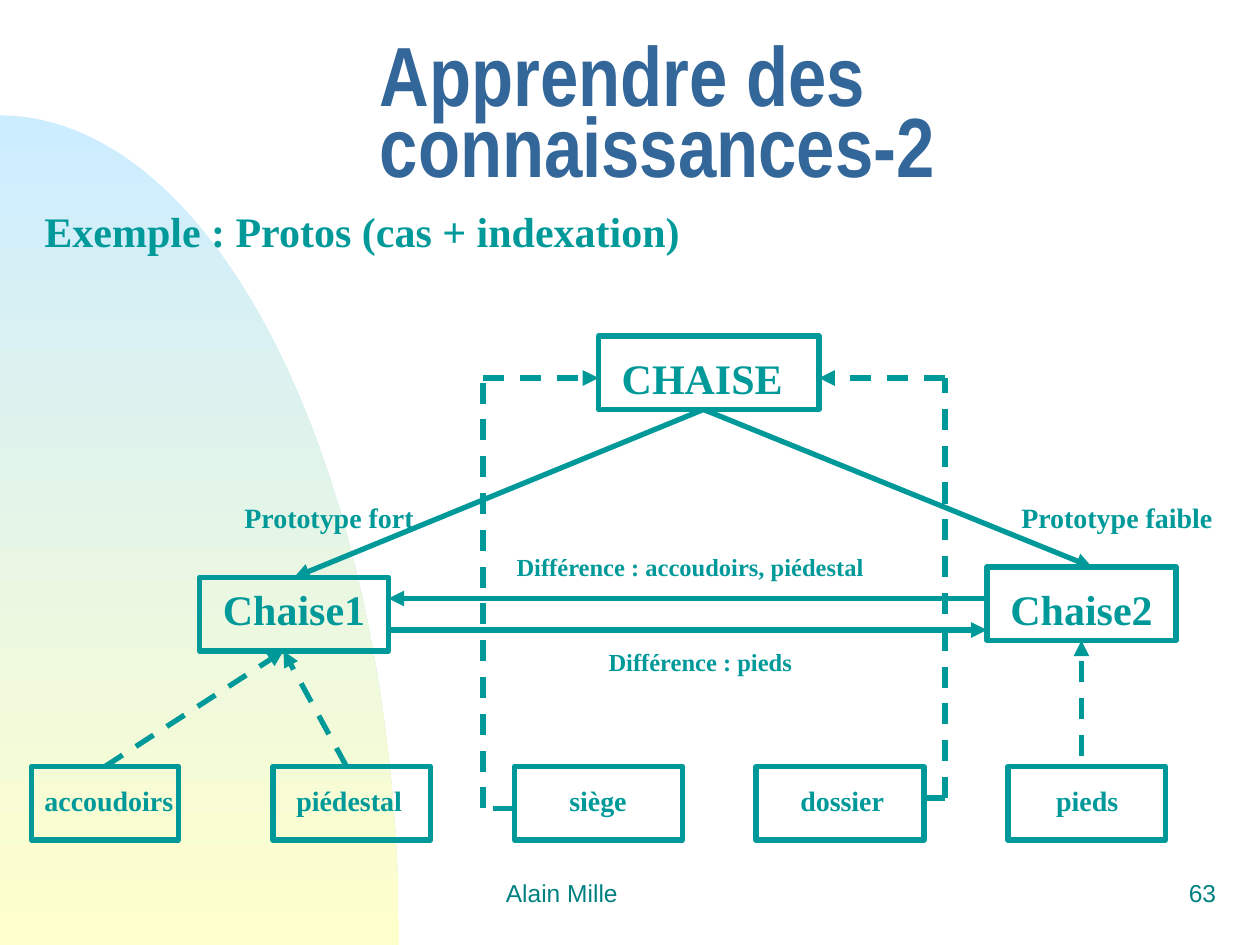
from math import cos, pi, sin

from lxml import etree
from pptx import Presentation
from pptx.dml.color import RGBColor
from pptx.enum.dml import MSO_LINE
from pptx.enum.shapes import MSO_CONNECTOR, MSO_SHAPE
from pptx.enum.text import MSO_ANCHOR, PP_ALIGN
from pptx.oxml.ns import qn
from pptx.util import Pt

TEAL = RGBColor(0x00, 0x99, 0x99)
DARK_TEAL = RGBColor(0x00, 0x80, 0x80)
BLUE = RGBColor(0x33, 0x66, 0x99)
SKY = RGBColor(0xCC, 0xEC, 0xFF)
CREAM = RGBColor(0xFF, 0xFF, 0xCC)
SERIF = "Times New Roman"

prs = Presentation()
prs.slide_width, prs.slide_height = Pt(720), Pt(540)
s = prs.slides.add_slide(prs.slide_layouts[6])


def add_text(text, box, size, font=SERIF, color=TEAL, bold=True,
             align=PP_ALIGN.CENTER, wrap=False):
    sp = s.shapes.add_textbox(*map(Pt, box))
    tf = sp.text_frame
    tf.word_wrap = wrap
    tf.vertical_anchor = MSO_ANCHOR.MIDDLE
    p = tf.paragraphs[0]
    p.alignment = align
    r = p.add_run()
    r.text = text
    r.font.size, r.font.name, r.font.bold = Pt(size), font, bold
    r.font.color.rgb = color
    return p


def add_line(start, end, dashed, arrow):
    c = s.shapes.add_connector(MSO_CONNECTOR.STRAIGHT, *map(Pt, start + end))
    c.line.color.rgb = TEAL
    c.line.width = Pt(3)
    if dashed:
        c.line.dash_style = MSO_LINE.DASH
    if arrow:
        etree.SubElement(c.line._get_or_add_ln(), qn("a:tailEnd"), type="triangle")
    etree.SubElement(c._element.spPr, qn("a:effectLst"))


# Background quarter ellipse, centred on the bottom left corner
RX, RY, STEPS = 228, 474, 60
arc = [(Pt(RX * sin(a)), Pt(540 - RY * cos(a)))
       for a in (pi / 2 * i / STEPS for i in range(STEPS + 1))]
builder = s.shapes.build_freeform(*arc[0])
builder.add_line_segments(arc[1:] + [(0, Pt(540))], close=True)
sp = builder.convert_to_shape()
sp.shadow.inherit = False
sp.line.fill.background()
sp.fill.gradient()
sp.fill.gradient_angle = 270
for stop, color, position in zip(sp.fill.gradient_stops, (SKY, CREAM), (0, 1)):
    stop.color.rgb, stop.position = color, position

# Title, subtitle and footer
title = add_text("Apprendre des connaissances-2", (210, 24, 486, 90), 48,
                 "Arial Narrow", BLUE, align=PP_ALIGN.LEFT, wrap=True)
title.line_spacing = 0.7
add_text("Exemple : Protos (cas + indexation)", (18, 114, 378, 36), 24)
add_text("Alain Mille", (282, 492, 228, 36), 14, "Arial", DARK_TEAL, False,
         PP_ALIGN.LEFT, True)
add_text("63", (552, 492, 150, 36), 14, "Arial", DARK_TEAL, False,
         PP_ALIGN.RIGHT, True)

# Boxes: name, left, top, width, then left, top, width, height of the text, size
boxes = [
    ("CHAISE", 342, 192, 126, (348, 198, 106.5, 36), 24),
    ("Chaise1", 114, 330, 108, (120, 330, 96, 36), 24),
    ("Chaise2", 564, 324, 108, (570, 330, 96, 36), 24),
    ("accoudoirs", 18, 438, 84, (18, 444, 88.5, 27), 16),
    ("piédestal", 156, 438, 90, (162, 444, 75, 27), 16),
    ("siège", 294, 438, 96, (318, 444, 47.5, 27), 16),
    ("dossier", 432, 438, 96, (450, 444, 62.5, 27), 16),
    ("pieds", 576, 438, 90, (596, 444, 50.5, 27), 16),
]
for name, left, top, width, text_box, size in boxes:
    sp = s.shapes.add_shape(MSO_SHAPE.RECTANGLE, Pt(left), Pt(top), Pt(width), Pt(42))
    sp.shadow.inherit = False
    sp.fill.background()
    sp.line.color.rgb = TEAL
    sp.line.width = Pt(3)
    add_text(name, text_box, size)

# Links: start, end, dashed, arrow
links = [
    ((402, 234), (168, 330), False, True),
    ((402, 234), (624, 324), False, True),
    ((564, 342), (222, 342), False, True),
    ((222, 360), (564, 360), False, True),
    ((60, 438), (162, 372), True, True),
    ((198, 438), (162, 372), True, True),
    ((618, 432), (618, 366), True, True),
    ((294, 462), (276, 462), True, False),
    ((276, 462), (276, 216), True, False),
    ((276, 216), (342, 216), True, True),
    ((528, 456), (540, 456), True, False),
    ((540, 456), (540, 216), True, False),
    ((540, 216), (468, 216), True, True),
]
for link in links:
    add_line(*link)

# Link labels
for label, box, size in [
    ("Prototype fort", (132, 282, 112, 27), 16),
    ("Prototype faible", (576, 282, 124.5, 27), 16),
    ("Différence : accoudoirs, piédestal", (288, 312, 213, 24), 14),
    ("Différence : pieds", (340.5, 366, 119.5, 24), 14),
]:
    add_text(label, box, size)

prs.save("out.pptx")
